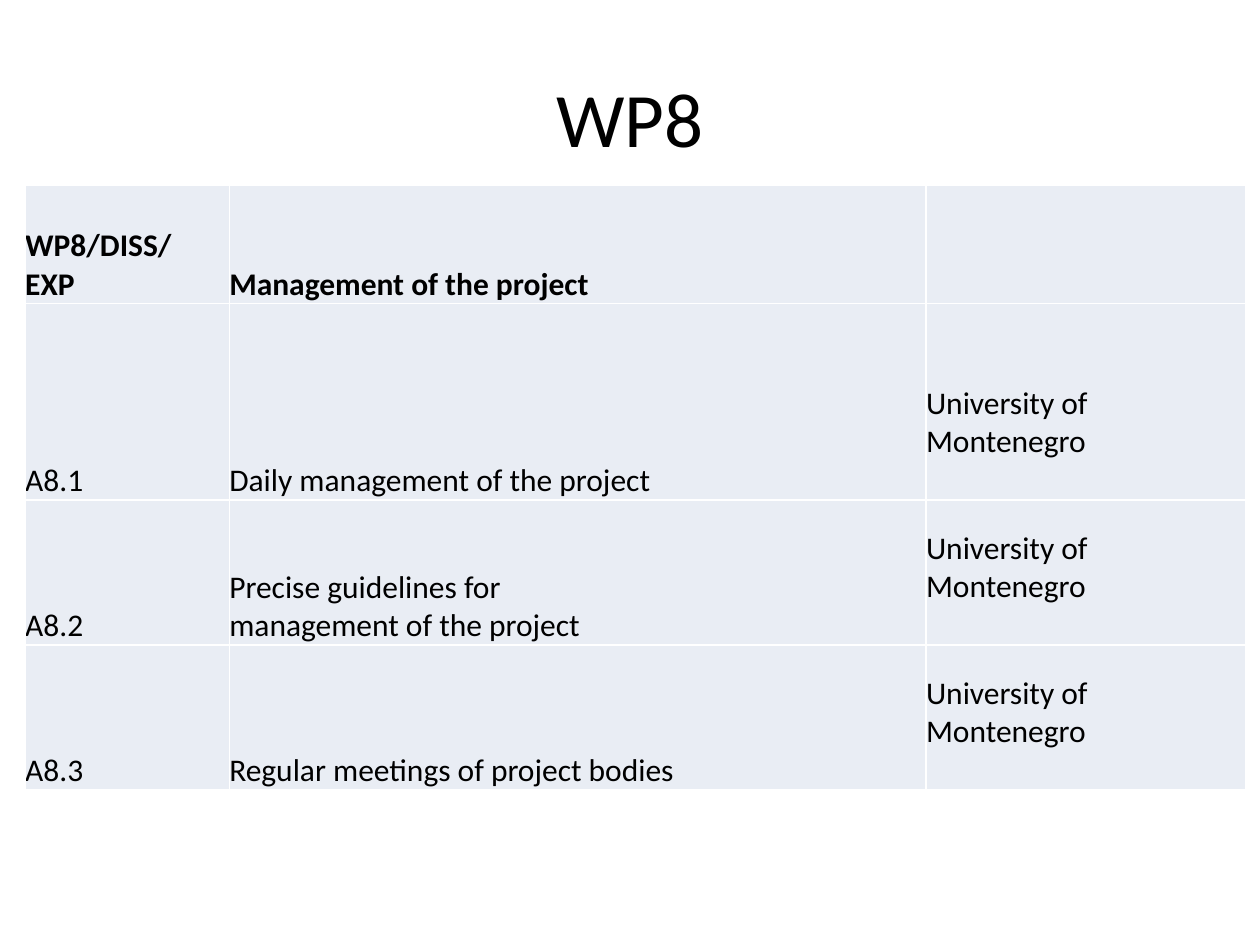
import pptx
import pptx.dml.color
import pptx.enum.text
import pptx.oxml
import pptx.oxml.ns
import pptx.util
from pptx.util import Inches

FONT = "Calibri"
PARTNER = "University of Montenegro"
COL_WIDTHS = [1.62, 5.53, 2.54]
ROW_HEIGHTS = [0.94, 1.56, 1.15, 1.15]
ROWS = [
    ["WP8/DISS/\nEXP", "Management of the project", ""],
    ["A8.1", "Daily management of the project", PARTNER],
    ["A8.2", "Precise guidelines for\nmanagement of the project", PARTNER],
    ["A8.3", "Regular meetings of project bodies", PARTNER],
]


def rgb(value):
    return pptx.dml.color.RGBColor.from_string(value)


def write(tf, text, size=18, bold=False, color="000000", align="LEFT", anchor="BOTTOM"):
    """Put one paragraph in a text frame; newlines become line breaks."""
    tf.word_wrap = True
    tf.vertical_anchor = getattr(pptx.enum.text.MSO_ANCHOR, anchor)
    p = tf.paragraphs[0]
    p.text = text.replace("\n", "\v")
    p.alignment = getattr(pptx.enum.text.PP_ALIGN, align)
    for r in p.runs:
        r.font.name = FONT
        r.font.size = pptx.util.Pt(size)
        r.font.bold = bold
        r.font.color.rgb = rgb(color)


def add_borders(cell, color="FFFFFF", width=1):
    tc_pr = cell._tc.get_or_add_tcPr()
    for side in ("lnL", "lnR", "lnT", "lnB"):
        tc_pr.append(pptx.oxml.parse_xml(
            f'<a:{side} {pptx.oxml.ns.nsdecls("a")} w="{pptx.util.Pt(width)}">'
            f'<a:solidFill><a:srgbClr val="{color}"/></a:solidFill></a:{side}>'))


def fill_cell(cell, text, bold=False, bottom=0):
    cell.margin_left = cell.margin_right = cell.margin_top = 0
    cell.margin_bottom = Inches(bottom)
    add_borders(cell)
    cell.fill.solid()
    cell.fill.fore_color.rgb = rgb("E9EDF4")
    write(cell.text_frame, text, bold=bold)
    cell.vertical_anchor = pptx.enum.text.MSO_ANCHOR.BOTTOM


def add_title(s, text):
    title = s.shapes.title
    title.left, title.top = Inches(0.5), Inches(0.3)
    title.width, title.height = Inches(9), Inches(1.25)
    write(title.text_frame, text, size=44, align="CENTER", anchor="MIDDLE")


def add_activity_table(s):
    frame = s.shapes.add_table(len(ROWS), len(COL_WIDTHS), Inches(0.2), Inches(1.47),
                               Inches(sum(COL_WIDTHS)), Inches(sum(ROW_HEIGHTS)))
    table = frame.table
    table.first_row = table.horz_banding = False
    for column, width in zip(table.columns, COL_WIDTHS):
        column.width = Inches(width)
    for i, (values, height) in enumerate(zip(ROWS, ROW_HEIGHTS)):
        table.rows[i].height = Inches(height)
        for j, text in enumerate(values):
            # Partner names sit one line above the bottom edge
            fill_cell(table.cell(i, j), text, bold=i == 0,
                      bottom=0.31 if text == PARTNER else 0)


def main():
    prs = pptx.Presentation()
    prs.slide_width, prs.slide_height = Inches(10), Inches(7.5)
    s = prs.slides.add_slide(prs.slide_layouts[5])
    add_title(s, "WP8")
    add_activity_table(s)
    prs.save("out.pptx")


if __name__ == "__main__":
    main()
